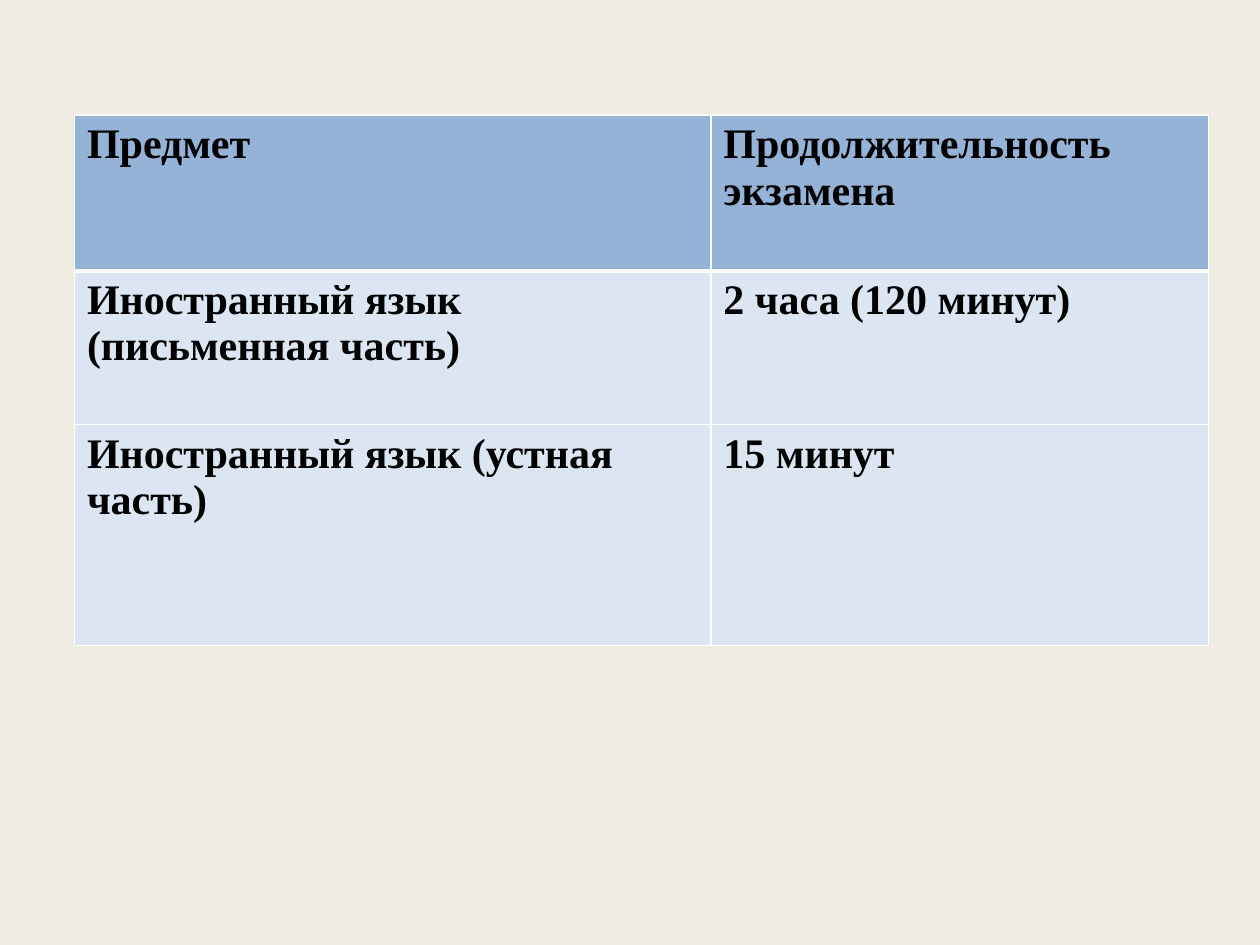
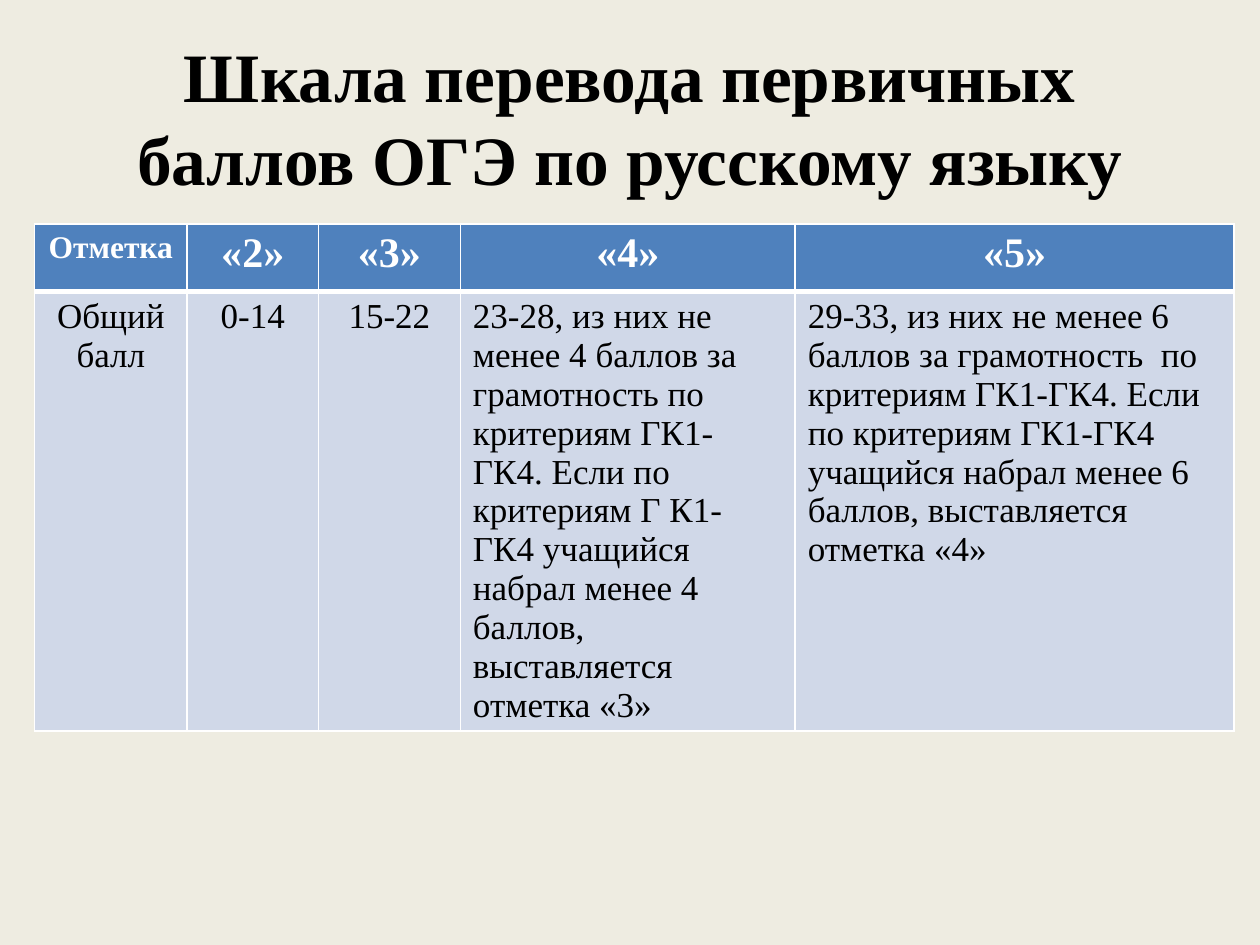
"""Two exam slides: durations and the score scale."""
from lxml import etree
from pptx import Presentation
from pptx.dml.color import RGBColor
from pptx.enum import text as tx
from pptx.oxml.ns import qn
from pptx.util import Cm, Pt

FONT = "Times New Roman"
HUES = {
    "page": "EEECE1", "ink": "000000", "white": "FFFFFF",
    "sky": "95B3D7", "pale": "DCE6F2", "blue": "4F81BD", "mist": "D0D8E8",
}
MID = tx.PP_ALIGN.CENTER
LEFT = tx.PP_ALIGN.LEFT

TIMES = [
    ["Предмет", "Продолжительность экзамена"],
    ["Иностранный язык (письменная часть)", "2 часа (120 минут)"],
    ["Иностранный язык (устная часть)", "15 минут"],
]
MARKS = [
    ["Отметка", "«2»", "«3»", "«4»", "«5»"],
    ["Общий балл", "0-14", "15-22",
     "23-28, из них не менее 4 баллов за грамотность по критериям ГК1-ГК4. "
     "Если по критериям Г К1-ГК4 учащийся набрал менее 4 баллов, "
     "выставляется отметка «3»",
     "29-33, из них не менее 6 баллов за грамотность  по критериям ГК1-ГК4. "
     "Если по критериям ГК1-ГК4 учащийся набрал менее 6 баллов, "
     "выставляется отметка «4»"],
]


def hue(name):
    """Return a named colour."""
    return RGBColor.from_string(HUES[name])


def write(frame, words, size=24, bold=True, color="ink", align=LEFT):
    """Put formatted text in a text frame."""
    para = frame.paragraphs[0]
    para.alignment = align
    run = para.add_run()
    run.text = words
    font = run.font
    font.name, font.size, font.bold = FONT, Pt(size), bold
    font.color.rgb = hue(color)


def edge(cell, side, width):
    """Draw one white border of a cell."""
    line = etree.SubElement(cell._tc.get_or_add_tcPr(), qn(f"a:ln{side}"),
                            w=str(Pt(width)))
    fill = etree.SubElement(line, qn("a:solidFill"))
    etree.SubElement(fill, qn("a:srgbClr"), val=HUES["white"])


def grid(slide, box, rows, cols, highs, fills, style):
    """Build a table at the box corner; style gives each cell's text format."""
    left, top = box
    frame = slide.shapes.add_table(len(rows), len(cols), Cm(left), Cm(top),
                                   Cm(sum(cols)), Cm(sum(highs)))
    table = frame.table
    table.horz_banding = False
    for col, wide in zip(table.columns, cols):
        col.width = Cm(wide)
    for row, high in zip(table.rows, highs):
        row.height = Cm(high)
    for i, line in enumerate(rows):
        for j, words in enumerate(line):
            cell = table.cell(i, j)
            for side in "LRTB":
                thick = (i, side) in ((0, "B"), (1, "T"))
                edge(cell, side, 3 if thick else 1)
            cell.fill.solid()
            cell.fill.fore_color.rgb = hue(fills[min(i, 1)])
            write(cell.text_frame, words, **style(i, j))


def head(slide, box, words):
    """Place and format the slide title."""
    title = slide.shapes.title
    title.left, title.top, title.width, title.height = map(Cm, box)
    frame = title.text_frame
    frame.word_wrap = True
    frame.auto_size = tx.MSO_AUTO_SIZE.NONE
    frame.vertical_anchor = tx.MSO_ANCHOR.MIDDLE
    write(frame, words, size=39.6, align=MID)


def mark(i, j):
    """Give the text format of a cell in the score scale."""
    if i == 0:
        return dict(size=24 if j else 18, color="white", align=MID)
    return dict(size=20, bold=False, align=MID if j < 3 else LEFT)


def times(deck):
    """Add the slide with exam durations."""
    slide = deck.slides.add_slide(deck.slide_layouts[6])
    grid(slide, (1.5, 2.32), TIMES, (12.83, 10.03), (3.14, 3.1, 4.45),
         ("sky", "pale"), lambda i, j: {})


def scale(deck):
    """Add the slide with the score scale."""
    slide = deck.slides.add_slide(deck.slide_layouts[5])
    head(slide, (1.27, 0.76, 22.86, 3.18),
         "Шкала перевода первичных баллов ОГЭ по русскому языку")
    grid(slide, (0.7, 4.52), MARKS, (3.07, 2.65, 2.86, 6.75, 8.85),
         (1.35, 8.85), ("blue", "mist"), mark)


def main():
    """Build and save the deck."""
    deck = Presentation()
    deck.slide_width, deck.slide_height = Cm(25.4), Cm(19.05)
    back = deck.slide_master.background.fill
    back.solid()
    back.fore_color.rgb = hue("page")
    times(deck)
    scale(deck)
    deck.save("out.pptx")


if __name__ == "__main__":
    main()
